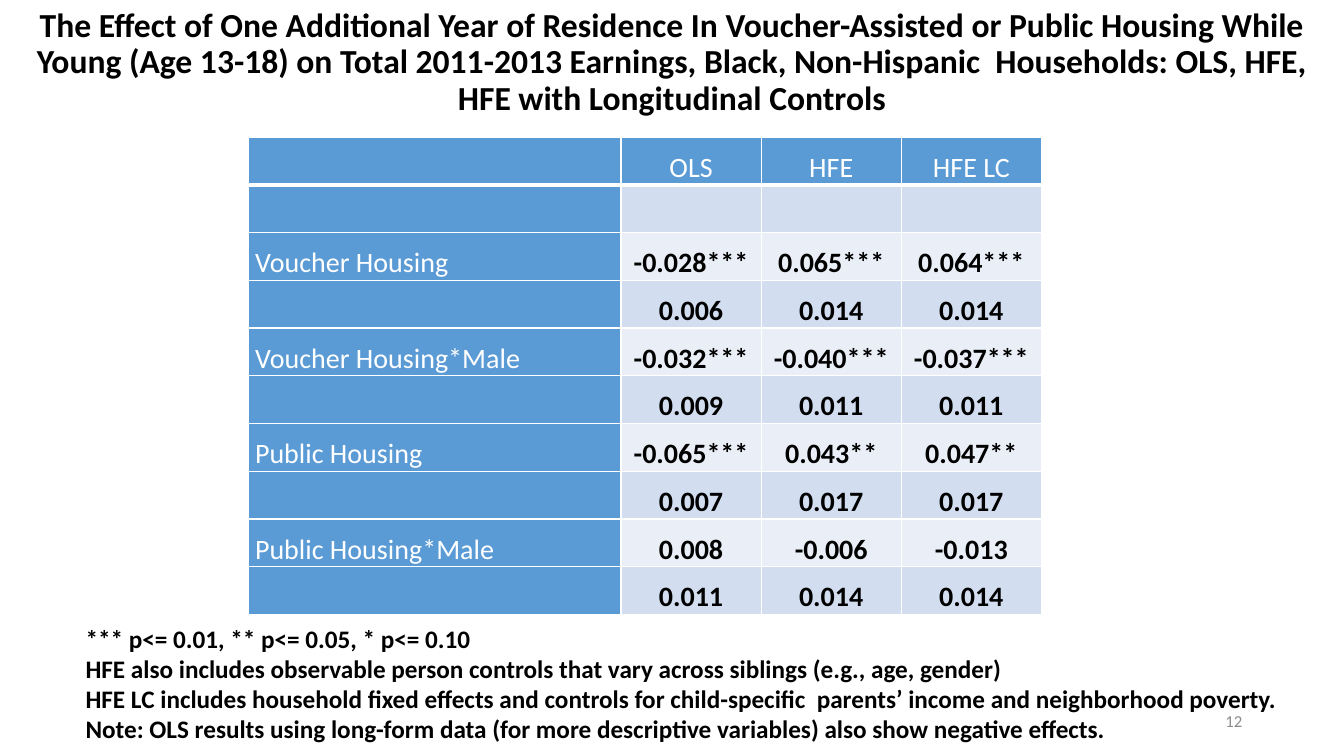
"""Build the housing residence and earnings regression slide."""
import dataclasses
import typing

import lxml.etree
import pptx
import pptx.dml.color
import pptx.enum.text
import pptx.oxml.ns
import pptx.shapes.autoshape
import pptx.slide
import pptx.table
import pptx.text.text
import pptx.util

Inches = pptx.util.Inches
Align = pptx.enum.text.PP_ALIGN
Anchor = pptx.enum.text.MSO_ANCHOR


@dataclasses.dataclass(frozen=True)
class Theme:
    font: str = "Calibri"
    black: str = "000000"
    white: str = "FFFFFF"
    grey: str = "8C8C8C"
    header: str = "5B9BD5"
    band_dark: str = "D2DEEF"
    band_light: str = "EAEFF7"
    title_size: int = 24
    table_size: int = 20
    caption_size: int = 18
    number_size: int = 12


@dataclasses.dataclass(frozen=True)
class Style:
    size: int
    color: str
    bold: bool = False
    align: Align = Align.LEFT


class Box(typing.NamedTuple):
    left: float
    top: float
    width: float
    height: float


class TextBlock(typing.NamedTuple):
    text: str
    box: Box
    style: Style
    anchor: Anchor


class ResultRow(typing.NamedTuple):
    label: str = ""
    ols: str = ""
    hfe: str = ""
    hfe_lc: str = ""


THEME = Theme()

TITLE = TextBlock(
    "The Effect of One Additional Year of Residence In Voucher-Assisted or Public Housing "
    "While Young (Age 13-18) on Total 2011-2013 Earnings, Black, Non-Hispanic  Households: "
    "OLS, HFE, HFE with Longitudinal Controls",
    Box(0, 0, 13.33, 1.25),
    Style(THEME.title_size, THEME.black, True, Align.CENTER),
    Anchor.MIDDLE,
)
TEXT_BLOCKS = (
    TextBlock(
        "12",
        Box(9.42, 6.95, 3, 0.4),
        Style(THEME.number_size, THEME.grey, align=Align.RIGHT),
        Anchor.MIDDLE,
    ),
    TextBlock(
        "*** p<= 0.01, ** p<= 0.05, * p<= 0.10\n"
        "HFE also includes observable person controls that vary across siblings (e.g., age, gender)\v"
        "HFE LC includes household fixed effects and controls for child-specific  parents’ income "
        "and neighborhood poverty.\n"
        "Note: OLS results using long-form data (for more descriptive variables) also show "
        "negative effects.",
        Box(0.75, 6.13, 12.12, 1.3),
        Style(THEME.caption_size, THEME.black, True),
        Anchor.TOP,
    ),
)
TABLE_BOX = Box(2.46, 1.36, 7.87, 4.74)
COLUMN_WIDTHS = (3.7, 1.39, 1.39, 1.39)
RESULTS = (
    ResultRow("", "OLS", "HFE", "HFE LC"),
    ResultRow(),
    ResultRow("Voucher Housing", "-0.028***", "0.065***", "0.064***"),
    ResultRow("", "0.006", "0.014", "0.014"),
    ResultRow("Voucher Housing*Male", "-0.032***", "-0.040***", "-0.037***"),
    ResultRow("", "0.009", "0.011", "0.011"),
    ResultRow("Public Housing", "-0.065***", "0.043**", "0.047**"),
    ResultRow("", "0.007", "0.017", "0.017"),
    ResultRow("Public Housing*Male", "0.008", "-0.006", "-0.013"),
    ResultRow("", "0.011", "0.014", "0.014"),
)


def rgb(color: str) -> pptx.dml.color.RGBColor:
    """Convert a hex string to a colour."""
    return pptx.dml.color.RGBColor.from_string(color)


def format_text(tf: pptx.text.text.TextFrame, style: Style) -> None:
    """Apply a style to every paragraph and run."""
    for p in tf.paragraphs:
        p.alignment = style.align
        for r in p.runs:
            r.font.name = THEME.font
            r.font.size = pptx.util.Pt(style.size)
            r.font.bold = style.bold
            r.font.color.rgb = rgb(style.color)


def fill_text(sp: pptx.shapes.autoshape.Shape, block: TextBlock) -> None:
    """Place a shape and write its text block."""
    sp.left, sp.top, sp.width, sp.height = map(Inches, block.box)
    tf = sp.text_frame
    tf.text = block.text
    tf.word_wrap = True
    tf.auto_size = pptx.enum.text.MSO_AUTO_SIZE.NONE
    tf.vertical_anchor = block.anchor
    format_text(tf, block.style)


def add_borders(cell: pptx.table._Cell, bottom: int) -> None:
    """Draw white cell borders with the given bottom width in points."""
    qn = pptx.oxml.ns.qn
    tc_pr = cell._tc.get_or_add_tcPr()
    for side, width in (("L", 1), ("R", 1), ("T", 1), ("B", bottom)):
        ln = lxml.etree.SubElement(tc_pr, qn(f"a:ln{side}"), w=str(pptx.util.Pt(width)))
        solid = lxml.etree.SubElement(ln, qn("a:solidFill"))
        lxml.etree.SubElement(solid, qn("a:srgbClr"), val=THEME.white)


def fill_cell(cell: pptx.table._Cell, text: str, row: int, column: int) -> None:
    """Write and format one table cell."""
    heading = row == 0 or column == 0
    band = THEME.band_dark if row % 2 else THEME.band_light
    add_borders(cell, 3 if row == 0 else 1)
    cell.fill.solid()
    cell.fill.fore_color.rgb = rgb(THEME.header if heading else band)
    cell.margin_left = cell.margin_right = Inches(0.07)
    cell.margin_top = cell.margin_bottom = 0
    cell.vertical_anchor = Anchor.BOTTOM
    cell.text = text
    format_text(cell.text_frame, Style(
        THEME.table_size,
        THEME.white if heading else THEME.black,
        not heading,
        Align.CENTER if column else Align.LEFT,
    ))


def add_results(s: pptx.slide.Slide) -> None:
    """Add the regression results table."""
    frame = s.shapes.add_table(len(RESULTS), len(COLUMN_WIDTHS), *map(Inches, TABLE_BOX))
    table = frame.table
    table.first_col = True
    for column, width in zip(table.columns, COLUMN_WIDTHS):
        column.width = Inches(width)
    for i, result in enumerate(RESULTS):
        for j, text in enumerate(result):
            fill_cell(table.cell(i, j), text, i, j)


def main() -> None:
    """Build and save the slide."""
    prs = pptx.Presentation()
    prs.slide_width, prs.slide_height = Inches(13.33), Inches(7.5)
    s = prs.slides.add_slide(prs.slide_layouts.get_by_name("Title Only"))
    fill_text(s.shapes.title, TITLE)
    s.shapes.title.text_frame.paragraphs[0].line_spacing = 0.9
    for block in TEXT_BLOCKS:
        fill_text(s.shapes.add_textbox(*map(Inches, block.box)), block)
    add_results(s)
    prs.save("out.pptx")


if __name__ == "__main__":
    main()
